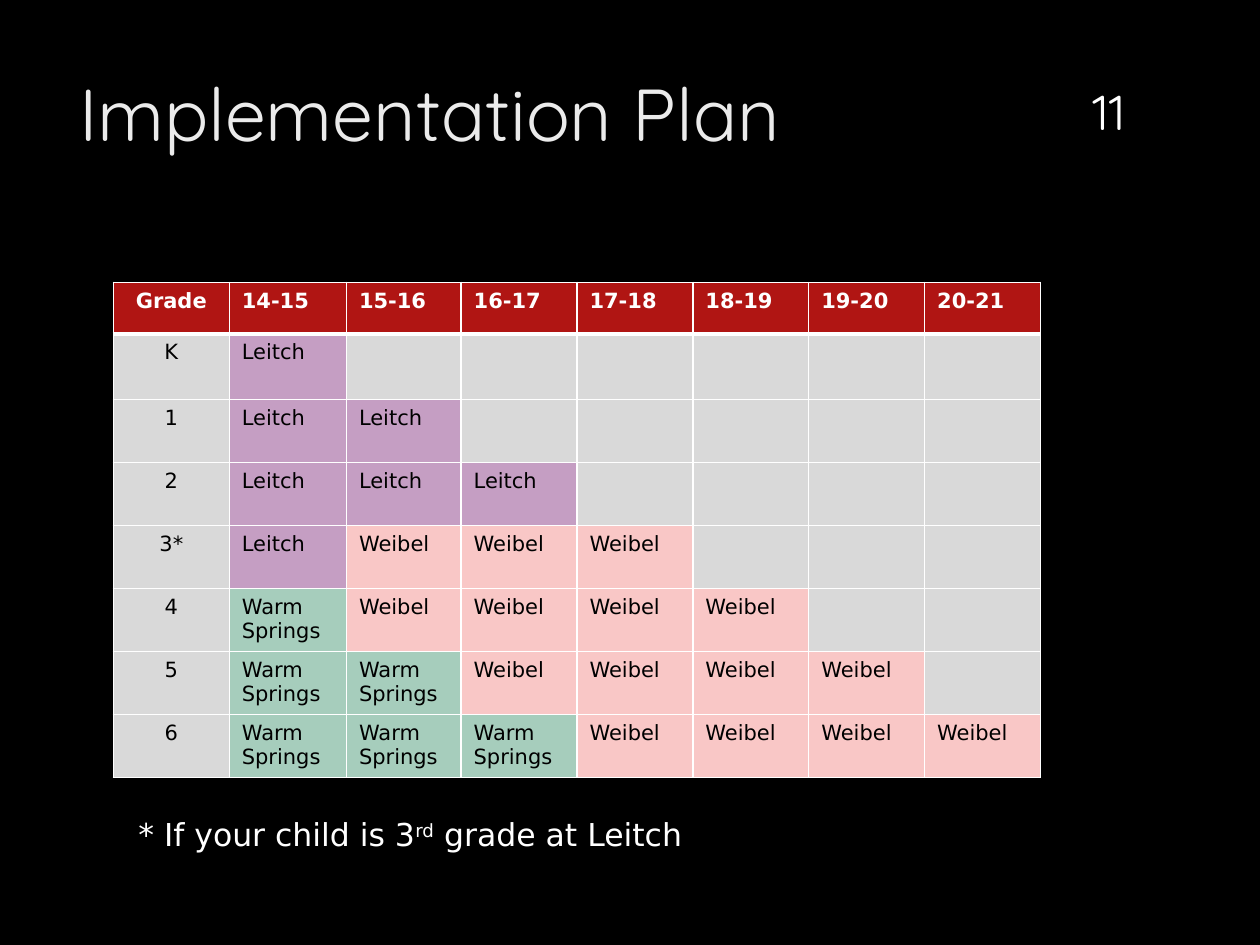
"""Build the Implementation Plan slide with its grade-by-year school table."""
from lxml import etree
from pptx import Presentation
from pptx.dml.color import RGBColor
from pptx.enum.text import MSO_ANCHOR, PP_ALIGN
from pptx.oxml.ns import qn
from pptx.util import Inches, Pt

LEFT, CENTER = PP_ALIGN.LEFT, PP_ALIGN.CENTER
TOP, BOTTOM = MSO_ANCHOR.TOP, MSO_ANCHOR.BOTTOM
BLACK = RGBColor(0x00, 0x00, 0x00)
WHITE = RGBColor(0xFF, 0xFF, 0xFF)
OFF_WHITE = RGBColor(0xEB, 0xEB, 0xEB)
RED = RGBColor(0xB0, 0x15, 0x13)
GRAY = RGBColor(0xD9, 0xD9, 0xD9)
PURPLE = RGBColor(0xC5, 0x9E, 0xC3)
PINK = RGBColor(0xF9, 0xC7, 0xC6)
GREEN = RGBColor(0xA6, 0xCD, 0xBC)

SCHOOL_FILLS = {"Leitch": PURPLE, "Weibel": PINK, "Warm Springs": GREEN}
YEARS = [f"{year}-{year + 1}" for year in range(14, 21)]
PLAN = {
    "K": ["Leitch"],
    "1": ["Leitch"] * 2,
    "2": ["Leitch"] * 3,
    "3*": ["Leitch"] + ["Weibel"] * 3,
    "4": ["Warm Springs"] + ["Weibel"] * 4,
    "5": ["Warm Springs"] * 2 + ["Weibel"] * 4,
    "6": ["Warm Springs"] * 3 + ["Weibel"] * 4,
}
COLUMN_WIDTHS = [0.92, 0.93, 0.91] + [0.92] * 5
ROW_HEIGHTS = [0.41, 0.52] + [0.5] * 6


def add_span(para, text, color, **formats):
    span = para.add_run()
    span.text = text
    span.font.color.rgb = color
    for name, value in formats.items():
        setattr(span.font, name, value)
    return span


def set_borders(cell, bottom_width):
    properties = cell._tc.get_or_add_tcPr()
    widths = {"lnL": 1, "lnR": 1, "lnT": 1, "lnB": bottom_width}
    for position, (side, width) in enumerate(widths.items()):
        line = etree.Element(qn(f"a:{side}"), w=str(Pt(width)))
        fill = etree.SubElement(line, qn("a:solidFill"))
        etree.SubElement(fill, qn("a:srgbClr"), val=str(WHITE))
        properties.insert(position, line)


deck = Presentation()
deck.slide_width, deck.slide_height = Inches(10), Inches(7.5)
page = deck.slides.add_slide(deck.slide_layouts[6])
page.background.fill.solid()
page.background.fill.fore_color.rgb = BLACK

title_font = {"name": "Quicksand", "size": Pt(42)}
number_font = {"name": "Quicksand", "size": Pt(28)}
note_font = {"name": "DejaVu Sans", "size": Pt(18)}
text_boxes = [
    ((0.53, 0.49, 7.72, 1.53), TOP, LEFT, OFF_WHITE, title_font, ["Implementation Plan"]),
    ((8.42, 0.32, 0.76, 0.84), BOTTOM, CENTER, WHITE, number_font, ["11"]),
    ((1, 6.42, 5.5, 0.4), TOP, LEFT, WHITE, note_font,
     ["* If your child is 3", "rd", " grade at Leitch"]),
]
for place, anchor, alignment, color, formats, texts in text_boxes:
    box = page.shapes.add_textbox(*map(Inches, place))
    box.text_frame.word_wrap = True
    box.text_frame.vertical_anchor = anchor
    para = box.text_frame.paragraphs[0]
    para.alignment = alignment
    for text in texts:
        span = add_span(para, text, color, **formats)
        if text == "rd":
            span._r.get_or_add_rPr().set("baseline", "30000")

rows = [["Grade"] + YEARS]
for grade, schools in PLAN.items():
    rows.append([grade] + schools + [""] * (len(YEARS) - len(schools)))

table = page.shapes.add_table(
    len(rows), len(rows[0]), Inches(0.9), Inches(2.24), Inches(7.34), Inches(3.92)
).table
table.horz_banding = False
for column, width in zip(table.columns, COLUMN_WIDTHS):
    column.width = Inches(width)
for row, height in zip(table.rows, ROW_HEIGHTS):
    row.height = Inches(height)

for row_index, row in enumerate(rows):
    header = row_index == 0
    for column_index, text in enumerate(row):
        cell = table.cell(row_index, column_index)
        cell.fill.solid()
        cell.fill.fore_color.rgb = RED if header else SCHOOL_FILLS.get(text, GRAY)
        set_borders(cell, 3 if header else 1)
        para = cell.text_frame.paragraphs[0]
        para.alignment = CENTER if column_index == 0 else LEFT
        if text:
            add_span(para, text, WHITE if header else BLACK,
                     name="DejaVu Sans", size=Pt(12), bold=header)

deck.save("out.pptx")
